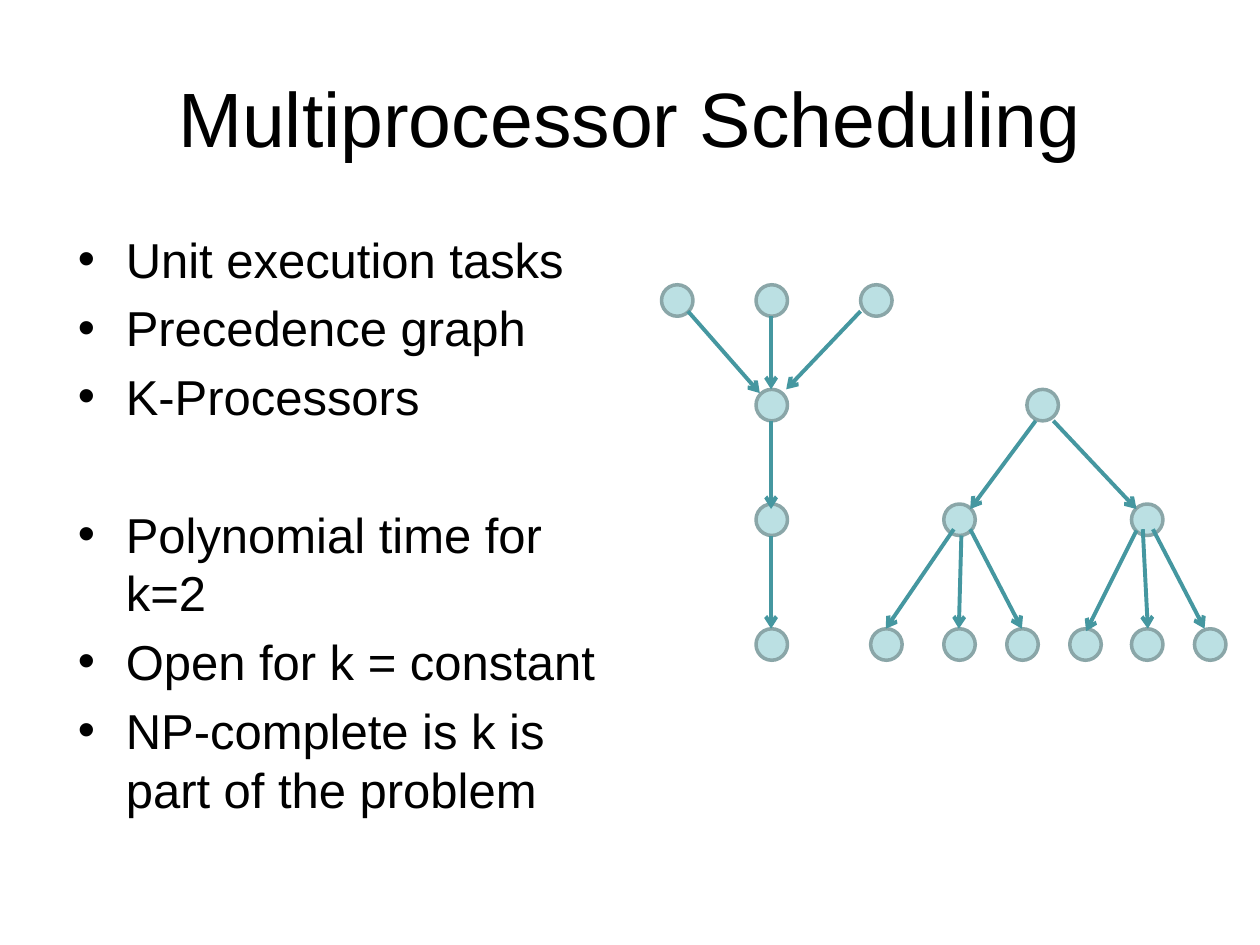
from lxml import etree
from pptx import Presentation
from pptx.dml.color import RGBColor
from pptx.enum.shapes import MSO_CONNECTOR, MSO_SHAPE
from pptx.enum.text import MSO_ANCHOR, PP_ALIGN
from pptx.oxml.ns import qn
from pptx.util import Pt

PX = 9144  # EMU in one px, at 100 px to the inch
STRAIGHT = MSO_CONNECTOR.STRAIGHT
OVAL = MSO_SHAPE.OVAL
CENTER = PP_ALIGN.CENTER
MIDDLE = MSO_ANCHOR.MIDDLE

FONT = "Arial"
TEXT_COLOR = "000000"
TASK_FILL, TASK_LINE, ARROW_COLOR = "BBE0E3", "8AA6A8", "4597A0"

TITLE = "Multiprocessor Scheduling"
BULLET_GROUPS = [
    ["Unit execution tasks", "Precedence graph", "K-Processors"],
    ["Polynomial time for k=2", "Open for k = constant",
     "NP-complete is k is part of the problem"],
]
BULLET_SIZE, BULLET_GAP, GROUP_GAP = 28, 5.6, 45
BULLET_INDENT = 38

TASK_SIZE = 25
TASK_ROWS = {  # top of the row: left edges of its tasks
    226: [525, 600, 683],
    309: [600, 815],
    400: [600, 749, 898],
    499: [600, 691, 749, 799, 849, 898, 948],
}
PRECEDENCES = [  # from x, from y, to x, to y
    (546, 247, 603, 312), (612, 251, 612, 309), (683, 247, 624, 309),
    (612, 334, 612, 404), (612, 425, 612, 499),
    (822, 334, 770, 404), (836, 334, 902, 404),
    (757, 420, 703, 499), (763, 425, 761, 499), (770, 420, 811, 499),
    (915, 420, 956, 499), (907, 420, 911, 499), (902, 421, 862, 501),
]


def px(*lengths):
    return [length * PX for length in lengths]


def color(hex_string):
    return RGBColor.from_string(hex_string)


def format_runs(paragraph, size):
    for run in paragraph.runs:
        run.font.name = FONT
        run.font.size = Pt(size)
        run.font.color.rgb = color(TEXT_COLOR)


def add_bullet(paragraph):
    properties = paragraph._p.get_or_add_pPr()
    properties.set("marL", str(BULLET_INDENT * PX))
    properties.set("indent", str(-BULLET_INDENT * PX))
    etree.SubElement(properties, qn("a:buFont")).set("typeface", FONT)
    etree.SubElement(properties, qn("a:buChar")).set("char", "•")


def add_title(slide):
    title = slide.shapes.title
    title.left, title.top, title.width, title.height = px(50, 30, 900, 125)
    title.text_frame.text = TITLE
    title.text_frame.vertical_anchor = MIDDLE
    paragraph = title.text_frame.paragraphs[0]
    paragraph.alignment = CENTER
    format_runs(paragraph, 44)


def add_bullets(slide):
    frame = slide.shapes.add_textbox(*px(52, 177, 442, 495)).text_frame
    frame.word_wrap = True
    frame.text = "\n".join(text for group in BULLET_GROUPS for text in group)
    group_starts = [group[0] for group in BULLET_GROUPS[1:]]
    for paragraph in frame.paragraphs:
        starts_group = paragraph.text in group_starts
        paragraph.space_before = Pt(GROUP_GAP if starts_group else BULLET_GAP)
        add_bullet(paragraph)
        format_runs(paragraph, BULLET_SIZE)


def add_task(slide, left, top):
    task = slide.shapes.add_shape(OVAL, *px(left, top, TASK_SIZE, TASK_SIZE))
    task.shadow.inherit = False
    task.fill.solid()
    task.fill.fore_color.rgb = color(TASK_FILL)
    task.line.color.rgb = color(TASK_LINE)
    task.line.width = Pt(2)


def add_arrow(slide, ends):
    arrow = slide.shapes.add_connector(STRAIGHT, *px(*ends))
    arrow.line.color.rgb = color(ARROW_COLOR)
    arrow.line.width = Pt(2.25)
    line = arrow.line._get_or_add_ln()
    etree.SubElement(line, qn("a:tailEnd")).set("type", "arrow")
    etree.SubElement(arrow._element.spPr, qn("a:effectLst"))


def main():
    presentation = Presentation()
    presentation.slide_width, presentation.slide_height = px(1000, 750)
    slide = presentation.slides.add_slide(presentation.slide_layouts[5])
    add_title(slide)
    add_bullets(slide)
    for top, lefts in TASK_ROWS.items():
        for left in lefts:
            add_task(slide, left, top)
    for ends in PRECEDENCES:
        add_arrow(slide, ends)
    presentation.save("out.pptx")


if __name__ == "__main__":
    main()
